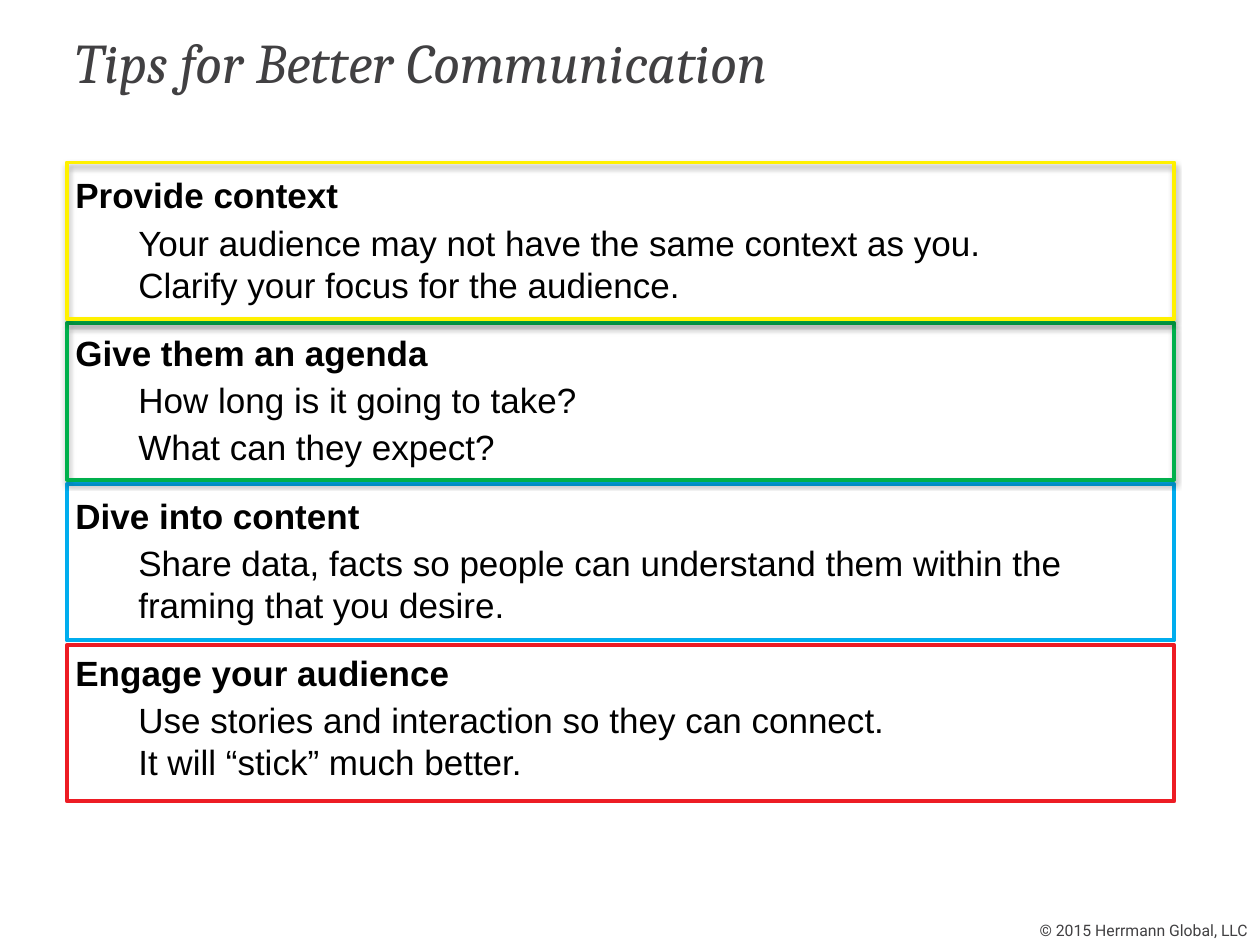
from lxml.etree import SubElement
from pptx import Presentation
from pptx.dml.color import RGBColor
from pptx.enum.shapes import MSO_SHAPE
from pptx.enum.text import MSO_ANCHOR, PP_ALIGN
from pptx.oxml.ns import qn
from pptx.util import Inches, Pt

COLORS = {
    "text": "000000",
    "title": "414042",
    "shadow": "000000",
    "yellow": "FFF100",
    "green": "00B04C",
    "blue": "00ADEE",
    "red": "ED1C24",
}

FRAMES = [("yellow", True), ("green", True), ("blue", False), ("red", False)]
FIRST_TOP, LAST_TOP = 1.29, 5.12
FRAME_STEP = (LAST_TOP - FIRST_TOP) / (len(FRAMES) - 1)

TIPS = [
    ("Provide context",
     ["Your audience may not have the same context as you.\v"
      "Clarify your focus for the audience."]),
    ("Give them an agenda",
     ["How long is it going to take?", "What can they expect?"]),
    ("Dive into content",
     ["Share data, facts so people can understand them within the "
      "framing that you desire."]),
    ("Engage your audience",
     ["Use stories and interaction so they can connect.\v"
      "It will “stick” much better."]),
]


def rgb(name):
    return RGBColor.from_string(COLORS[name])


def add_text_box(slide, left, top, width, height, wrap=True):
    text_frame = slide.shapes.add_textbox(
        Inches(left), Inches(top), Inches(width), Inches(height)).text_frame
    text_frame.word_wrap = wrap
    text_frame.vertical_anchor = MSO_ANCHOR.TOP
    return text_frame


def write(paragraph, text, font="Arial", size=20, color="text", bold=False,
          italic=False, align=PP_ALIGN.LEFT, indent=0, before=0, after=0):
    paragraph.text = text
    paragraph.alignment = align
    paragraph.space_before = Pt(before)
    paragraph.space_after = Pt(after)
    if indent:
        paragraph._p.get_or_add_pPr().set("marL", str(Inches(indent)))
    for run in paragraph.runs:
        run.font.name = font
        run.font.size = Pt(size)
        run.font.bold = bold
        run.font.italic = italic
        run.font.color.rgb = rgb(color)


def add_shadow(shape):
    effects = shape._element.spPr.find(qn("a:effectLst"))
    shadow = SubElement(effects, qn("a:outerShdw"), blurRad=str(Pt(3.1)),
                        dist=str(Pt(1.8)), dir="5400000", rotWithShape="0")
    color = SubElement(shadow, qn("a:srgbClr"), val=COLORS["shadow"])
    SubElement(color, qn("a:alpha"), val="35000")


def add_frame(slide, top, color, shadowed):
    shape = slide.shapes.add_shape(
        MSO_SHAPE.RECTANGLE, Inches(0.53), Inches(top), Inches(8.79), Inches(1.24))
    shape.shadow.inherit = False
    shape.fill.background()
    shape.line.color.rgb = rgb(color)
    shape.line.width = Pt(2.25)
    if shadowed:
        add_shadow(shape)


def add_tips(slide):
    text_frame = add_text_box(slide, 0.5, 1.33, 9, 5.37)
    paragraph = text_frame.paragraphs[0]
    for number, (heading, details) in enumerate(TIPS):
        if number:
            paragraph = text_frame.add_paragraph()
        write(paragraph, heading, bold=True, before=12 if number else 0, after=3)
        for detail in details:
            write(text_frame.add_paragraph(), detail, indent=0.5, after=3)


def main():
    presentation = Presentation()
    presentation.slide_width = Inches(10)
    presentation.slide_height = Inches(7.5)
    slide = presentation.slides.add_slide(presentation.slide_layouts[6])

    copyright_frame = add_text_box(slide, 8.11, 7.26, 1.89, 0.24, wrap=False)
    write(copyright_frame.paragraphs[0], "© 2015 Herrmann Global, LLC",
          font="Roboto", size=9, color="title", align=PP_ALIGN.RIGHT)

    for row, (color, shadowed) in reversed(list(enumerate(FRAMES))):
        add_frame(slide, FIRST_TOP + row * FRAME_STEP, color, shadowed)

    title_frame = add_text_box(slide, 0.5, 0.17, 9, 0.93)
    write(title_frame.paragraphs[0], "Tips for Better Communication",
          font="Cambria", size=32, color="title", italic=True)
    add_tips(slide)

    presentation.save("out.pptx")


if __name__ == "__main__":
    main()
